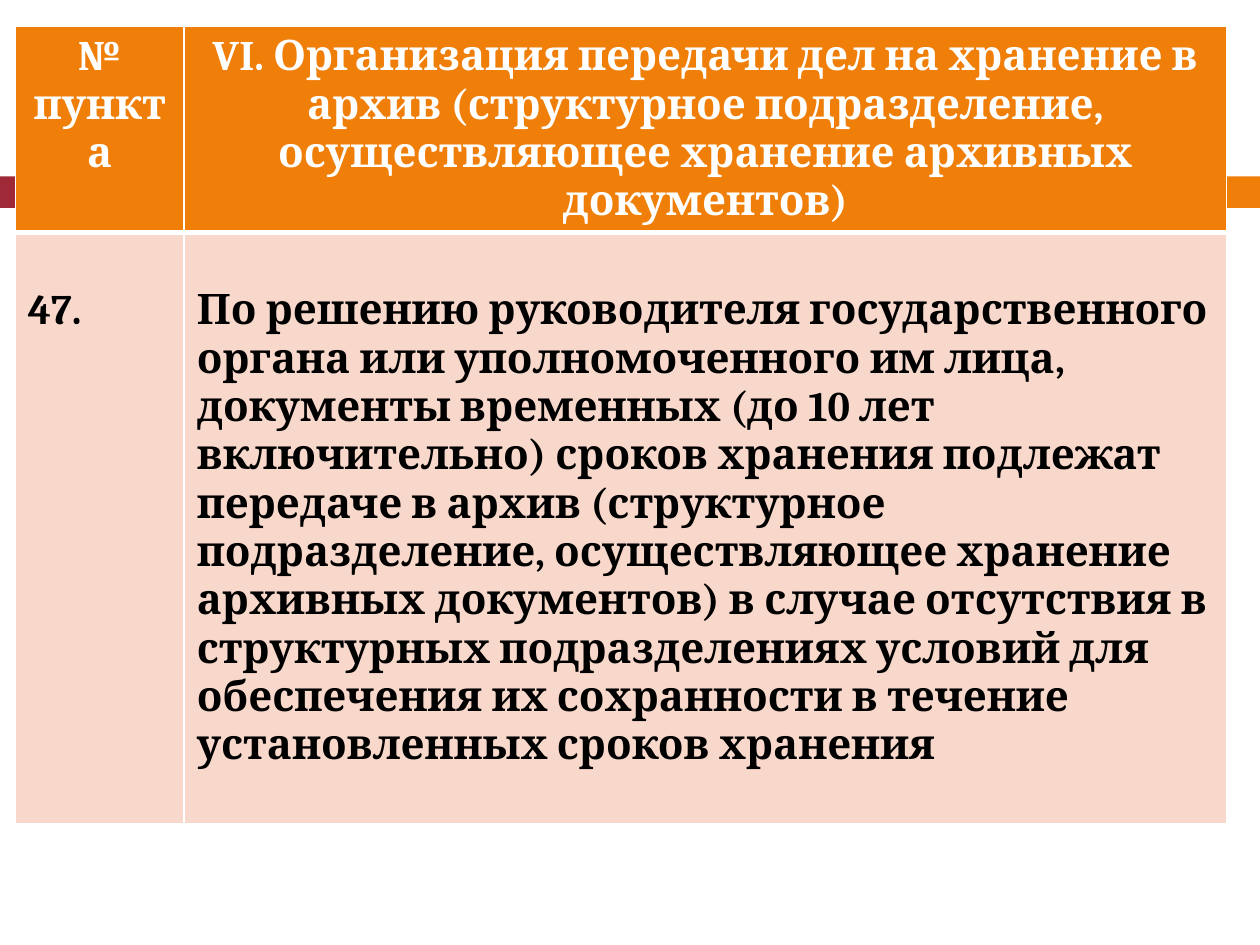
"""Build a slide with a two-column table on handing files over to the archive."""
from lxml.etree import SubElement
from pptx import Presentation
from pptx.dml.color import RGBColor
from pptx.enum.shapes import MSO_SHAPE
from pptx.enum.text import PP_ALIGN
from pptx.oxml.ns import qn
from pptx.util import Pt

COLORS = {
    "red": "9F2936",
    "orange": "F07F09",
    "pink": "F9D8CC",
    "white": "FFFFFF",
    "black": "000000",
}
HEADER = (
    "№ пункта",
    "VI. Организация передачи дел на хранение в архив (структурное подразделение, "
    "осуществляющее хранение архивных документов)",
)
CLAUSE = (
    "47.",
    "По решению руководителя государственного органа или уполномоченного им лица, "
    "документы временных (до 10 лет включительно) сроков хранения подлежат передаче "
    "в архив (структурное подразделение, осуществляющее хранение архивных документов) "
    "в случае отсутствия в структурных подразделениях условий для обеспечения их "
    "сохранности в течение установленных сроков хранения",
)
ROWS = [
    {"texts": HEADER, "fill": "orange", "font": "white", "align": PP_ALIGN.CENTER,
     "height": 117.5, "top_margin": 3.6, "bottom_line": 3},
    {"texts": CLAUSE, "fill": "pink", "font": "black", "align": PP_ALIGN.LEFT,
     "height": 338, "top_margin": 31.2, "bottom_line": 1},
]
COLUMN_WIDTHS = (96.5, 595.5)
TABLE_LEFT, TABLE_TOP = 8.75, 15.25
BANDS = [(0, 42, "red"), (47, 673, "orange")]
BAND_TOP, BAND_HEIGHT = 100.8, 18


def color(name):
    return RGBColor.from_string(COLORS[name])


def add_band(slide, left, width, fill):
    band = slide.shapes.add_shape(
        MSO_SHAPE.RECTANGLE, Pt(left), Pt(BAND_TOP), Pt(width), Pt(BAND_HEIGHT))
    band.shadow.inherit = False
    band.fill.solid()
    band.fill.fore_color.rgb = color(fill)
    band.line.fill.background()


def add_borders(cell, widths):
    properties = cell._tc.get_or_add_tcPr()
    for index, (side, width) in enumerate(widths.items()):
        line = SubElement(properties, qn(f"a:{side}"), w=str(Pt(width)))
        fill = SubElement(line, qn("a:solidFill"))
        SubElement(fill, qn("a:srgbClr"), val=COLORS["white"])
        properties.insert(index, line)


def fill_cell(cell, text, row, top_line):
    cell.fill.solid()
    cell.fill.fore_color.rgb = color(row["fill"])
    cell.margin_top = Pt(row["top_margin"])
    cell.text = text
    paragraph = cell.text_frame.paragraphs[0]
    paragraph.alignment = row["align"]
    paragraph.font.name = "Cambria"
    paragraph.font.size = Pt(24)
    paragraph.font.bold = True
    paragraph.font.color.rgb = color(row["font"])
    add_borders(cell, {"lnL": 1, "lnR": 1, "lnT": top_line, "lnB": row["bottom_line"]})


def add_clause_table(slide):
    table = slide.shapes.add_table(
        len(ROWS), len(COLUMN_WIDTHS), Pt(TABLE_LEFT), Pt(TABLE_TOP),
        Pt(sum(COLUMN_WIDTHS)), Pt(sum(row["height"] for row in ROWS))).table
    for column, width in zip(table.columns, COLUMN_WIDTHS):
        column.width = Pt(width)
    top_line = 1
    for row, table_row in zip(ROWS, table.rows):
        table_row.height = Pt(row["height"])
        for cell, text in zip(table_row.cells, row["texts"]):
            fill_cell(cell, text, row, top_line)
        top_line = row["bottom_line"]


def main():
    presentation = Presentation()
    presentation.slide_width, presentation.slide_height = Pt(720), Pt(540)
    slide = presentation.slides.add_slide(presentation.slide_layouts[6])
    for left, width, fill in BANDS:
        add_band(slide, left, width, fill)
    add_clause_table(slide)
    presentation.save("out.pptx")


if __name__ == "__main__":
    main()
